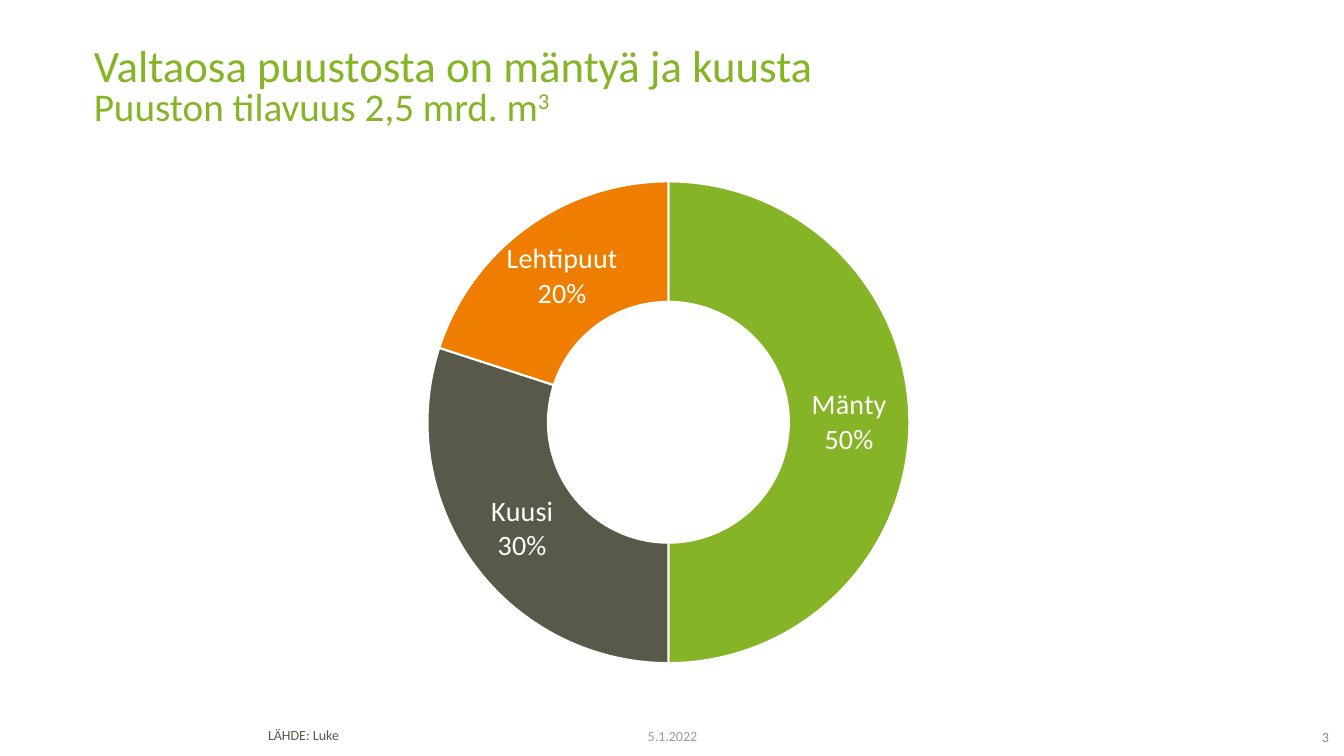
from lxml import etree
from pptx import Presentation
from pptx.chart.data import CategoryChartData
from pptx.dml.color import RGBColor
from pptx.enum.chart import XL_CHART_TYPE
from pptx.enum.text import MSO_ANCHOR, PP_ALIGN
from pptx.oxml.ns import qn
from pptx.util import Inches, Pt

DOUGHNUT = XL_CHART_TYPE.DOUGHNUT
TOP, MIDDLE = MSO_ANCHOR.TOP, MSO_ANCHOR.MIDDLE
LEFT, CENTER, RIGHT = PP_ALIGN.LEFT, PP_ALIGN.CENTER, PP_ALIGN.RIGHT

FONT = "Calibri"
GREEN, GREY, ORANGE, WHITE = "85B526", "59594A", "EF7D00", "FFFFFF"
TITLE = [("Valtaosa puustosta on mäntyä ja kuusta", 32),
         ("Puuston tilavuus 2,5 mrd. m", 28),
         ("3", 28)]
SPECIES = [("Mänty", 50, GREEN), ("Kuusi", 30, GREY), ("Lehtipuut", 20, ORANGE)]
FOOTERS = [
    ("LÄHDE: Luke", (2.56, 7.18, 7.18, 0.27), (0.1, 0.05, 0.1, 0.05), LEFT, TOP, "58594A", 0.85),
    ("3", (12.65, 7.24, 0.53, 0.19), (0, 0, 0, 0.04), RIGHT, MIDDLE, "878787", 1),
    ("5.1.2022", (5.17, 7.15, 3, 0.31), (0.1, 0.05, 0.1, 0.05), CENTER, MIDDLE, "9B9B96", 1),
]
CHART_BOX = (0.83, 1.57, 11.69, 5.16)
RING_BOX = (4.24, 1.8, 4.78, 4.78)


def color(value):
    return RGBColor.from_string(value)


def style(font, size, value):
    font.name = FONT
    font.size = Pt(size)
    font.color.rgb = color(value)


def inches(values):
    return [Inches(value) for value in values]


def add_title(page):
    title = page.shapes.title
    title.left, title.top, title.width, title.height = inches((0.83, 0.39, 11.69, 0.98))
    frame = title.text_frame
    frame.word_wrap = True
    frame.vertical_anchor = MIDDLE
    para = frame.paragraphs[0]
    para.alignment = LEFT
    para.line_spacing = 0.8
    for index, (text, size) in enumerate(TITLE):
        if index == 1:
            para.add_line_break()
        span = para.add_run()
        span.text = text
        style(span.font, size, GREEN)
    span._r.get_or_add_rPr().set("baseline", "30000")


def add_footer(page, text, place, insets, alignment, anchor, value, spacing):
    frame = page.shapes.add_textbox(*inches(place)).text_frame
    frame.word_wrap = True
    frame.vertical_anchor = anchor
    (frame.margin_left, frame.margin_top,
     frame.margin_right, frame.margin_bottom) = inches(insets)
    frame.text = text
    para = frame.paragraphs[0]
    para.alignment = alignment
    para.line_spacing = spacing
    style(para.runs[0].font, 10, value)


def place_ring(chart):
    area = chart._chartSpace.chart.plotArea
    for old in area.findall(qn("c:layout")):
        area.remove(old)
    layout = etree.Element(qn("c:layout"))
    area.insert(0, layout)
    manual = etree.SubElement(layout, qn("c:manualLayout"))
    left, top, width, height = CHART_BOX
    ring_left, ring_top, ring_width, ring_height = RING_BOX
    settings = [("layoutTarget", "inner"), ("xMode", "edge"), ("yMode", "edge"),
                ("x", (ring_left - left) / width), ("y", (ring_top - top) / height),
                ("w", ring_width / width), ("h", ring_height / height)]
    for name, value in settings:
        etree.SubElement(manual, qn("c:" + name)).set("val", str(value))


def add_doughnut(page):
    data = CategoryChartData()
    data.categories = [name for name, _, _ in SPECIES]
    data.add_series("Series 1", [share for _, share, _ in SPECIES])
    chart = page.shapes.add_chart(DOUGHNUT, *inches(CHART_BOX), data).chart
    chart.has_legend = False
    chart.has_title = False
    style(chart.font, 10, GREY)
    plot = chart.plots[0]
    plot.vary_by_categories = True
    plot._element.find(qn("c:holeSize")).set("val", "50")
    series = plot.series[0]
    for index, (_, _, value) in enumerate(SPECIES):
        look = series.points[index].format
        look.fill.solid()
        look.fill.fore_color.rgb = color(value)
        look.line.color.rgb = color(WHITE)
        look.line.width = Pt(1.5)
    labels = series.data_labels
    labels.show_value = False
    labels.show_category_name = True
    labels.show_percentage = True
    style(labels.font, 20, WHITE)
    separator = etree.Element(qn("c:separator"))
    separator.text = "\n"
    labels._element.find(qn("c:showBubbleSize")).addnext(separator)
    place_ring(chart)


def main():
    deck = Presentation()
    deck.slide_width, deck.slide_height = inches((13.33, 7.5))
    page = deck.slides.add_slide(deck.slide_layouts[5])
    add_title(page)
    add_doughnut(page)
    for footer in FOOTERS:
        add_footer(page, *footer)
    deck.save("out.pptx")


if __name__ == "__main__":
    main()
